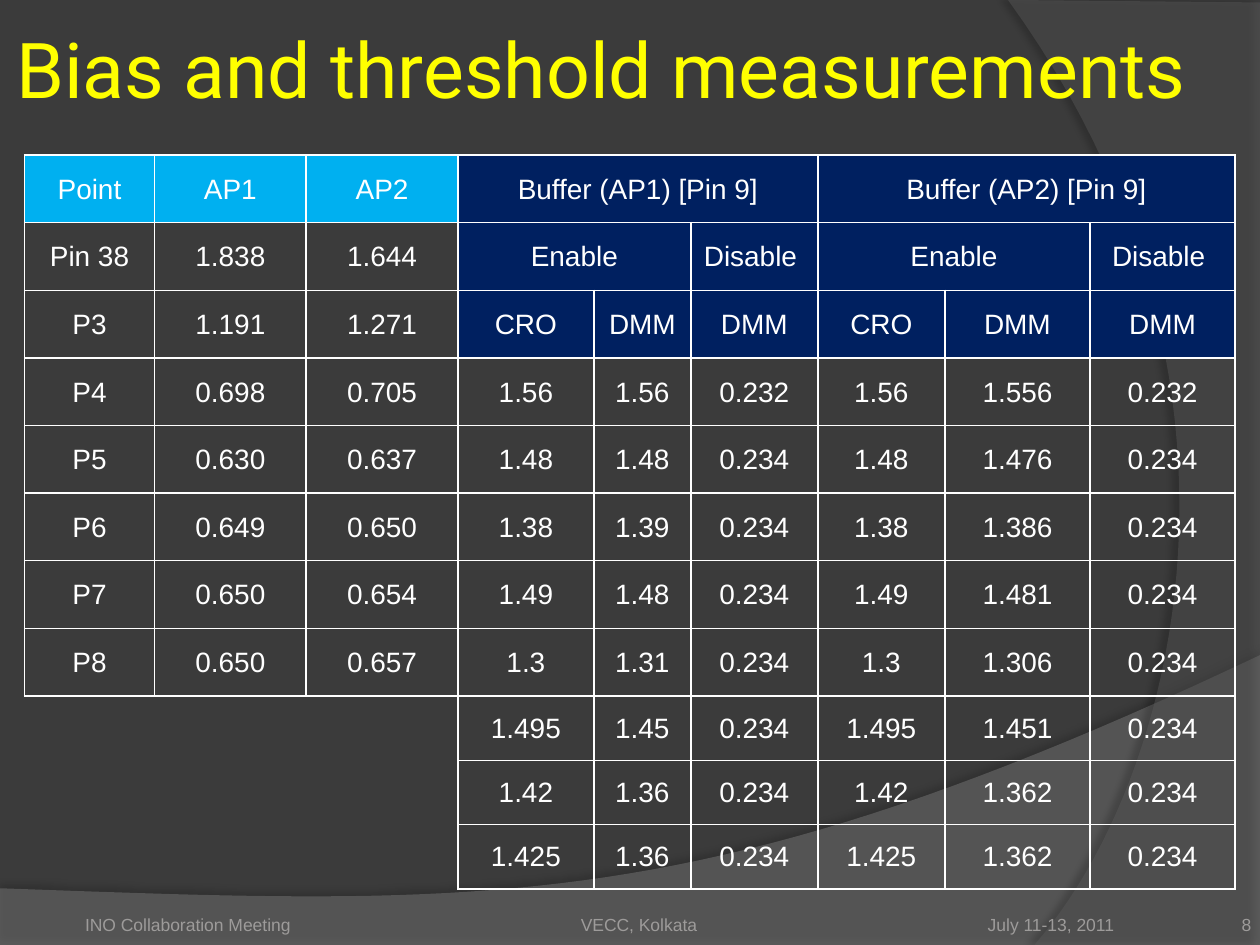
from dataclasses import dataclass

import pptx
import pptx.dml.color
import pptx.enum.text
import pptx.oxml
import pptx.oxml.ns
import pptx.util
from lxml import etree

Pt = pptx.util.Pt
RGB = pptx.dml.color.RGBColor.from_string
ALIGN = pptx.enum.text.PP_ALIGN
ANCHOR = pptx.enum.text.MSO_ANCHOR
qn = pptx.oxml.ns.qn


@dataclass(frozen=True)
class Theme:
    background: str = "3B3B3B"
    wave: str = "7F7F7F"
    arc: str = "5E5E5E"
    shadow: str = "000000"
    title: str = "FFFF00"
    body: str = "FFFFFF"
    footer: str = "9D9B9A"
    point_header: str = "00B0F0"
    buffer_header: str = "002060"
    title_font: str = "Roboto"
    body_font: str = "Arial"
    title_size: int = 44
    body_size: int = 16
    footer_size: int = 10


theme = Theme()


def write(frame, text, font, size, color, align, anchor):
    frame.text = text
    frame.vertical_anchor = anchor
    paragraph = frame.paragraphs[0]
    paragraph.alignment = align
    for run in paragraph.runs:
        run.font.name = font
        run.font.size = Pt(size)
        run.font.color.rgb = RGB(color)


def bezier(points, steps=48):
    """Sample a cubic curve from its four control points, in points."""
    for step in range(1, steps + 1):
        t = step / steps
        weights = ((1 - t) ** 3, 3 * t * (1 - t) ** 2, 3 * t * t * (1 - t), t ** 3)
        yield tuple(sum(w * p[axis] for w, p in zip(weights, points)) for axis in (0, 1))


deck = pptx.Presentation()
deck.slide_width, deck.slide_height = Pt(720), Pt(540)
slide = deck.slides.add_slide(deck.slide_layouts[6])
slide.background.fill.solid()
slide.background.fill.fore_color.rgb = RGB(theme.background)

# Backdrop: straight corners, curve, fill, opacity %, shadow opacity %, distance, angle
backdrops = [
    ([(0, 507.6), (0, 540), (720, 540), (720, 374.4)],
     [(720, 374.4), (402.5, 524.9), (281.5, 517.7), (0, 507.6)],
     theme.wave, 45, 35, 3.5, 270),
    ([(720, 1.44), (720, 540), (591.1, 540)],
     [(591.1, 540), (673.2, 445.7), (733, 216), (576, 0)],
     theme.arc, 40, 45, 4, 180),
]
for corners, curve, color, opacity, shadow_opacity, distance, angle in backdrops:
    outline = [(Pt(x), Pt(y)) for x, y in corners + list(bezier(curve))]
    builder = slide.shapes.build_freeform(*outline[0])
    builder.add_line_segments(outline[1:], close=True)
    sweep = builder.convert_to_shape()
    sweep.line.fill.background()
    sweep.fill.solid()
    sweep.fill.fore_color.rgb = RGB(color)
    tint = sweep.fill._xPr.find(".//" + qn("a:srgbClr"))
    etree.SubElement(tint, qn("a:alpha"), val=str(opacity * 1000))
    sweep.shadow.inherit = False
    effects = sweep.element.spPr.find(qn("a:effectLst"))
    shadow = etree.SubElement(effects, qn("a:outerShdw"), blurRad=str(Pt(4)),
                              dist=str(Pt(distance)), dir=str(angle * 60000),
                              algn="ctr", rotWithShape="0")
    shade = etree.SubElement(shadow, qn("a:srgbClr"), val=theme.shadow)
    etree.SubElement(shade, qn("a:alpha"), val=str(shadow_opacity * 1000))

# Title and footer: text, box, insets, font, size, color, alignment, anchor
footer_style = (theme.body_font, theme.footer_size, theme.footer)
captions = [
    ("Bias and threshold measurements", (5.76, 3.6, 708.5, 70.6), (3.6,) * 4,
     (theme.title_font, theme.title_size, theme.title), ALIGN.LEFT, ANCHOR.MIDDLE),
    ("INO Collaboration Meeting\tVECC, Kolkata\tJuly 11-13, 2011",
     (2.88, 505.4, 680.4, 28.8), (45.7, 3.6, 0, 0), footer_style, ALIGN.LEFT, ANCHOR.BOTTOM),
    ("8", (686.9, 505.4, 28.1, 28.8), (0,) * 4, footer_style, ALIGN.RIGHT, ANCHOR.BOTTOM),
]
for text, box, insets, style, align, anchor in captions:
    frame = slide.shapes.add_textbox(*map(Pt, box)).text_frame
    frame.word_wrap = True
    (frame.margin_left, frame.margin_top,
     frame.margin_right, frame.margin_bottom) = map(Pt, insets)
    write(frame, text, *style, align, anchor)
    if "\t" in text:
        tabs = etree.SubElement(frame.paragraphs[0]._p.get_or_add_pPr(), qn("a:tabLst"))
        for position, kind in ((316.5, "ctr"), (588, "r")):
            etree.SubElement(tabs, qn("a:tab"), pos=str(Pt(position)), algn=kind)

# Measurement table; None marks a cell covered by the merged one on its left
measurements = [
    ["Point", "AP1", "AP2", "Buffer (AP1) [Pin 9]", None, None,
     "Buffer (AP2) [Pin 9]", None, None],
    ["Pin 38", "1.838", "1.644", "Enable", None, "Disable ", "Enable", None, "Disable "],
    ["P3", "1.191", "1.271", "CRO", "DMM", "DMM", "CRO", "DMM", "DMM"],
    ["P4", "0.698", "0.705", "1.56", "1.56", "0.232", "1.56", "1.556", "0.232"],
    ["P5", "0.630", "0.637", "1.48", "1.48", "0.234", "1.48", "1.476", "0.234"],
    ["P6", "0.649", "0.650", "1.38", "1.39", "0.234", "1.38", "1.386", "0.234"],
    ["P7", "0.650", "0.654", "1.49", "1.48", "0.234", "1.49", "1.481", "0.234"],
    ["P8", "0.650", "0.657", "1.3", "1.31", "0.234", "1.3", "1.306", "0.234"],
    ["", "", "", "1.495", "1.45", "0.234", "1.495", "1.451", "0.234"],
    ["", "", "", "1.42", "1.36", "0.234", "1.42", "1.362", "0.234"],
    ["", "", "", "1.425", "1.36", "0.234", "1.425", "1.362", "0.234"],
]
column_widths = [74.3, 86.7, 86.7, 77.7, 55.4, 72.6, 72.6, 82.9, 82.9]
row_heights = [38.65] * 8 + [36.75] * 3
point_columns, point_rows, header_rows = 3, 8, 3

table = slide.shapes.add_table(
    len(row_heights), len(column_widths), Pt(14), Pt(88.6),
    Pt(sum(column_widths)), Pt(sum(row_heights))).table
table.first_row = table.horz_banding = False
for column, width in zip(table.columns, column_widths):
    column.width = Pt(width)
for row, height in zip(table.rows, row_heights):
    row.height = Pt(height)

for r, values in enumerate(measurements):
    for c, value in enumerate(values):
        cell = table.cell(r, c)
        cell.margin_left = cell.margin_top = cell.margin_right = Pt(0.72)
        cell.margin_bottom = 0

        edges = {"L", "R", "T", "B"}
        if value == "":
            edges = {edge for edge, shown in (("T", r == point_rows),
                                              ("R", c == point_columns - 1)) if shown}
        properties = cell._tc.get_or_add_tcPr()
        for edge in "LRTB":
            border = etree.SubElement(properties, qn("a:ln" + edge), w=str(Pt(1)))
            if edge in edges:
                paint = etree.SubElement(border, qn("a:solidFill"))
                etree.SubElement(paint, qn("a:srgbClr"), val=theme.body)
            else:
                etree.SubElement(border, qn("a:noFill"))

        if c < point_columns:
            header_color = theme.point_header if r == 0 else None
        else:
            header_color = theme.buffer_header if r < header_rows else None
        if header_color:
            cell.fill.solid()
            cell.fill.fore_color.rgb = RGB(header_color)
        else:
            cell.fill.background()

        if value:
            write(cell.text_frame, value, theme.body_font, theme.body_size,
                  theme.body, ALIGN.CENTER, None)
            cell.vertical_anchor = ANCHOR.MIDDLE
            last = c
            while last + 1 < len(values) and values[last + 1] is None:
                last += 1
            if last > c:
                cell.merge(table.cell(r, last))

deck.save("out.pptx")
